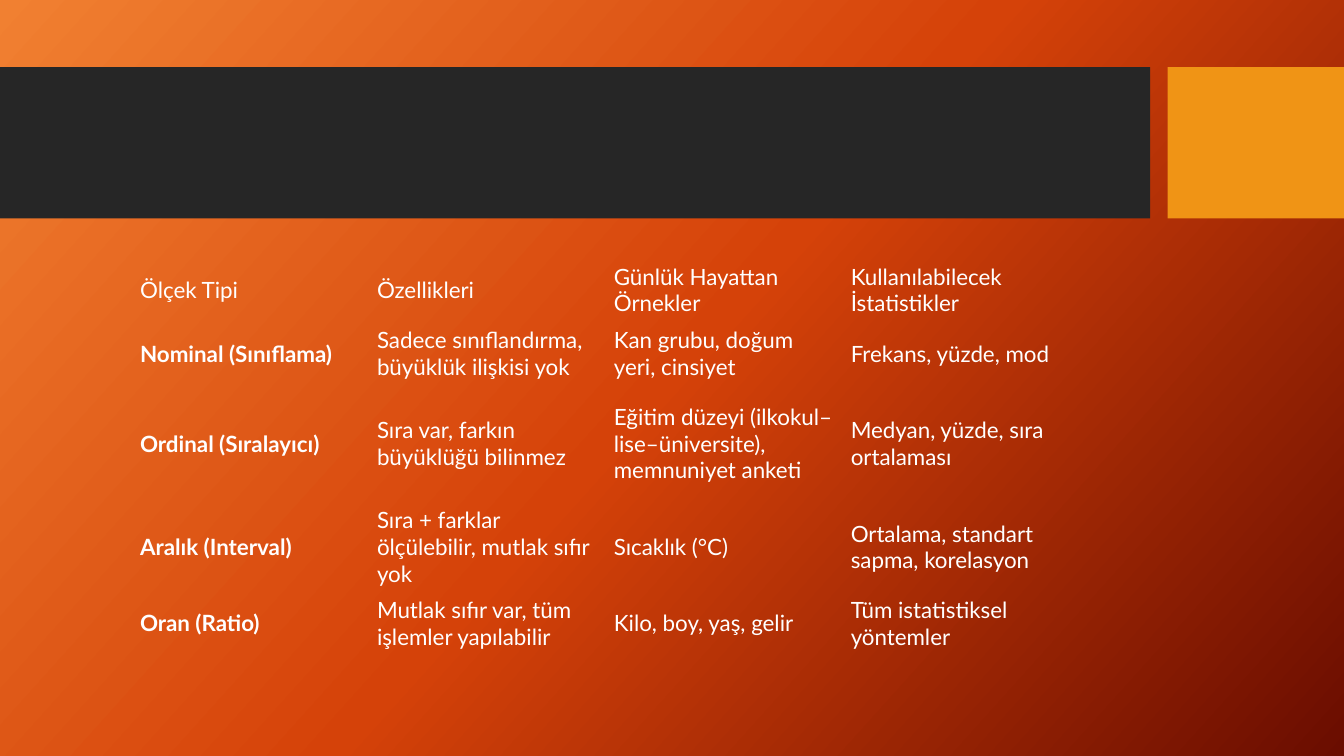
"""Build a slide with a table of the four measurement scales."""
from copy import deepcopy
from typing import NamedTuple

from pptx import Presentation
from pptx.dml.color import RGBColor
from pptx.enum.shapes import MSO_SHAPE
from pptx.enum.text import MSO_ANCHOR
from pptx.oxml.ns import qn
from pptx.slide import Slide
from pptx.table import _Cell as Cell
from pptx.util import Pt

WIDE, HIGH = 960, 540
PLAIN = "{2D5ABB26-0587-4C30-8999-92F81FD0307C}"
STOPS = ["F18031", "D54209", "6A0D00"]


class Bar(NamedTuple):
    left: float
    width: float
    fill: str


class Scale(NamedTuple):
    high: float
    cells: tuple[str, str, str, str]


BARS = [Bar(0, 821.5, "262626"), Bar(834, 126, "F09415")]
SCALES = [
    Scale(45.4, ("Ölçek Tipi", "Özellikleri", "Günlük Hayattan Örnekler",
                 "Kullanılabilecek İstatistikler")),
    Scale(45.4, ("Nominal (Sınıflama)", "Sadece sınıflandırma, büyüklük ilişkisi yok",
                 "Kan grubu, doğum yeri, cinsiyet", "Frekans, yüzde, mod")),
    Scale(83.5, ("Ordinal (Sıralayıcı)", "Sıra var, farkın büyüklüğü bilinmez",
                 "Eğitim düzeyi (ilkokul–lise–üniversite), memnuniyet anketi",
                 "Medyan, yüzde, sıra ortalaması")),
    Scale(64, ("Aralık (Interval)", "Sıra + farklar ölçülebilir, mutlak sıfır yok",
               "Sıcaklık (°C)", "Ortalama, standart sapma, korelasyon")),
    Scale(45.4, ("Oran (Ratio)", "Mutlak sıfır var, tüm işlemler yapılabilir",
                 "Kilo, boy, yaş, gelir", "Tüm istatistiksel yöntemler")),
]


def paint(color: str) -> RGBColor:
    """Turn a hex string into a colour."""
    return RGBColor.from_string(color)


def write(cell: Cell, text: str, *, size: float = 16, face: str = "Lato",
          color: str = "FFFFFF", bold: bool = False) -> None:
    """Put formatted text in a cell."""
    cell.text = text
    font = cell.text_frame.paragraphs[0].runs[0].font
    font.size, font.name, font.bold = Pt(size), face, bold
    font.color.rgb = paint(color)


def shade(slide: Slide) -> None:
    """Fill the background with an even gradient."""
    fill = slide.background.fill
    fill.gradient()
    fill.gradient_angle = 318
    stops = slide.element.find(".//" + qn("a:gsLst"))
    stops.insert(1, deepcopy(stops[0]))
    for i, (stop, color) in enumerate(zip(fill.gradient_stops, STOPS)):
        stop.color.rgb = paint(color)
        stop.position = i / (len(STOPS) - 1)


def block(slide: Slide, bar: Bar) -> None:
    """Draw one part of the header band."""
    shape = slide.shapes.add_shape(MSO_SHAPE.RECTANGLE, Pt(bar.left), Pt(48),
                                   Pt(bar.width), Pt(108))
    shape.shadow.inherit = False
    shape.fill.solid()
    shape.fill.fore_color.rgb = paint(bar.fill)
    shape.line.fill.background()


def grid(slide: Slide, scales: list[Scale]) -> None:
    """Draw the table of scales."""
    high = sum(scale.high for scale in scales)
    frame = slide.shapes.add_table(len(scales), len(scales[0].cells), Pt(93.6),
                                   Pt(184.3), Pt(676.8), Pt(high))
    table = frame.table
    table.horz_banding = False
    frame.element.find(".//" + qn("a:tableStyleId")).text = PLAIN
    for r, scale in enumerate(scales):
        table.rows[r].height = Pt(scale.high)
        for c, text in enumerate(scale.cells):
            cell = table.cell(r, c)
            cell.fill.background()
            cell.vertical_anchor = MSO_ANCHOR.MIDDLE
            cell.margin_left = cell.margin_right = Pt(6.5)
            cell.margin_top = cell.margin_bottom = Pt(3)
            write(cell, text, bold=r > 0 and c == 0)


def main() -> None:
    """Build and save the slide."""
    deck = Presentation()
    deck.slide_width, deck.slide_height = Pt(WIDE), Pt(HIGH)
    slide = deck.slides.add_slide(deck.slide_layouts[6])
    shade(slide)
    for bar in BARS:
        block(slide, bar)
    grid(slide, SCALES)
    deck.save("out.pptx")


if __name__ == "__main__":
    main()
